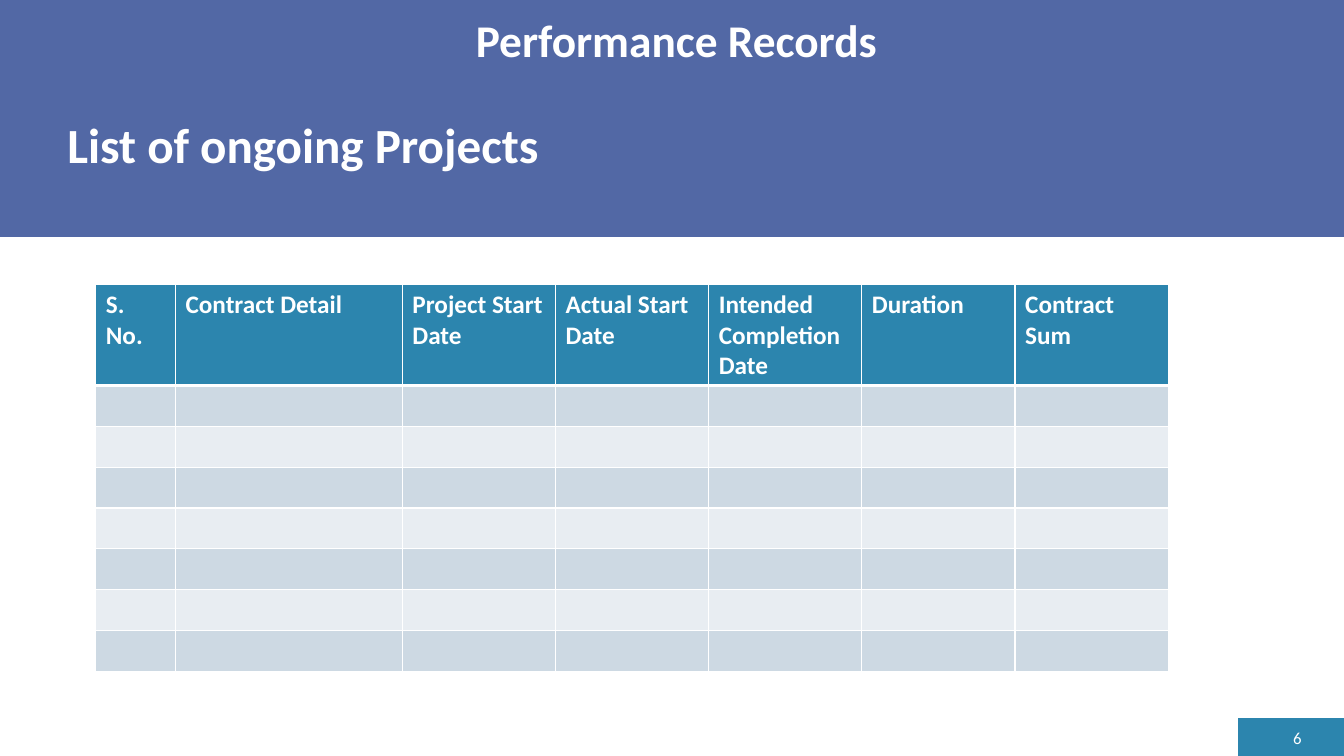
from lxml.etree import SubElement
from pptx import Presentation
from pptx.dml.color import RGBColor
from pptx.enum.shapes import MSO_SHAPE
from pptx.enum.text import MSO_ANCHOR, PP_ALIGN
from pptx.oxml.ns import qn
from pptx.util import Inches, Pt

WHITE = RGBColor(0xFF, 0xFF, 0xFF)
TEAL = RGBColor(0x2C, 0x85, 0xAE)
BLUE = RGBColor(0x52, 0x68, 0xA5)
BANDS = RGBColor(0xCD, 0xD9, 0xE3), RGBColor(0xE8, 0xED, 0xF2)
HEADS = ["S. No.", "Contract Detail", "Project Start Date", "Actual Start Date",
         "Intended Completion Date", "Duration", "Contract Sum"]
WIDTHS = [5.93, 16.88] + [11.4] * 5
HEIGHTS = [13.4] + [5.4] * 7


def write(frame, text, size=18, bold=False, align=PP_ALIGN.LEFT, space=1.0):
    """Put one formatted line of text in a frame."""
    para = frame.paragraphs[0]
    para.alignment, para.line_spacing = align, space
    run = para.add_run()
    run.text = text
    font = run.font
    font.name, font.size, font.bold = "Calibri", Pt(size), bold
    font.color.rgb = WHITE


def edge(cell, base):
    """Draw white borders round a table cell."""
    props = cell._tc.get_or_add_tcPr()
    for spot, (side, width) in enumerate(
            [("L", 1), ("R", 1), ("T", 1), ("B", base)]):
        line = SubElement(props, qn(f"a:ln{side}"), w=str(Pt(width)))
        fill = SubElement(line, qn("a:solidFill"))
        SubElement(fill, qn("a:srgbClr"), val=str(WHITE))
        props.insert(spot, line)


class Deck:
    """Style and current slide, measured in percent of the slide's size."""

    def __init__(self):
        """Start a deck with one blank slide."""
        self.show = Presentation()
        self.show.slide_width = Inches(13.33)
        self.show.slide_height = Inches(7.5)
        slide = self.show.slides.add_slide(self.show.slide_layouts[6])
        self.shapes = slide.shapes

    def wide(self, share):
        """Turn a share of the width into a length."""
        return round(self.show.slide_width * share / 100)

    def high(self, share):
        """Turn a share of the height into a length."""
        return round(self.show.slide_height * share / 100)

    def area(self, left, top, width, height):
        """Turn four shares into a position and size."""
        return (self.wide(left), self.high(top),
                self.wide(width), self.high(height))

    def block(self, *box, color):
        """Add a plain rectangle."""
        shape = self.shapes.add_shape(MSO_SHAPE.RECTANGLE, *self.area(*box))
        shape.shadow.inherit = False
        shape.fill.solid()
        shape.fill.fore_color.rgb = color
        shape.line.fill.background()

    def label(self, text, *box, **style):
        """Add a text box centred on its height."""
        frame = self.shapes.add_textbox(*self.area(*box)).text_frame
        frame.word_wrap = True
        frame.vertical_anchor = MSO_ANCHOR.MIDDLE
        write(frame, text, **style)

    def table(self, left, top, heads, widths, heights):
        """Add a banded table with a header row and empty body."""
        box = self.area(left, top, sum(widths), sum(heights))
        grid = self.shapes.add_table(len(heights), len(widths), *box).table
        for col, width in zip(grid.columns, widths):
            col.width = self.wide(width)
        for num, (row, height) in enumerate(zip(grid.rows, heights)):
            row.height = self.high(height)
            for cell, head in zip(row.cells, heads):
                cell.fill.solid()
                cell.fill.fore_color.rgb = BANDS[(num - 1) % 2] if num else TEAL
                edge(cell, 1 if num else 3)
                if not num:
                    write(cell.text_frame, head, bold=True)


def main():
    """Build and save the slide."""
    deck = Deck()
    deck.block(92.12, 95, 7.88, 5, color=TEAL)
    deck.block(0, 0, 100, 31.33, color=BLUE)
    deck.label("Performance Records", 3.08, 2.27, 94.5, 6.67, size=32.4,
               bold=True, align=PP_ALIGN.CENTER, space=0.9)
    deck.label("6", 94.5, 96, 3.08, 3.07, size=12, align=PP_ALIGN.RIGHT)
    deck.label("List of ongoing Projects", 4.28, 14, 94.5, 11.07, size=35.1,
               bold=True, space=0.9)
    deck.table(7.13, 37.6, HEADS, WIDTHS, HEIGHTS)
    deck.show.save("out.pptx")


if __name__ == "__main__":
    main()
